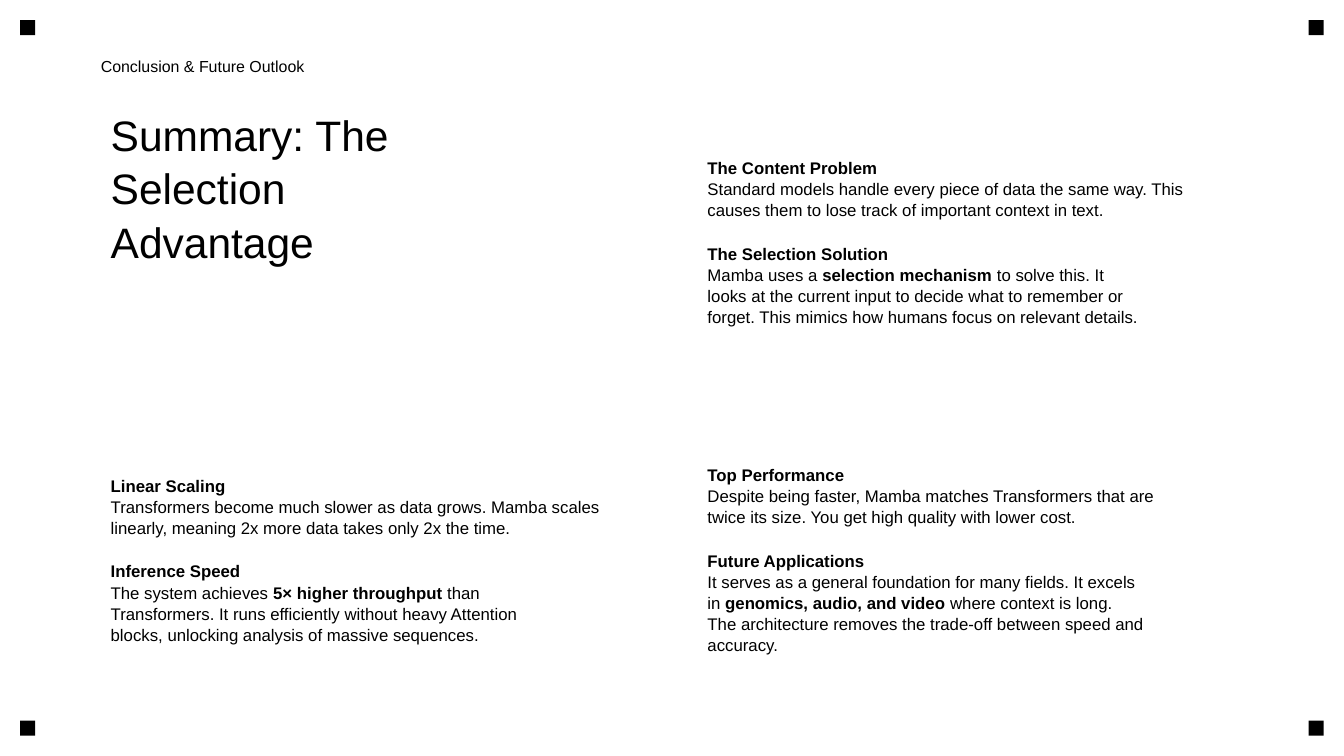
from dataclasses import dataclass
from itertools import product

from pptx import Presentation
from pptx import util as u
from pptx.dml.color import RGBColor
from pptx.enum import shapes, text

SLIDE_WIDTH, SLIDE_HEIGHT = 33.87, 19.05
MARGIN = 2.54
COLUMN_WIDTH, ROW_HEIGHT = 13.77, 7.24
COLUMN_GAP, ROW_GAP = 1.27, 0.76
CORNER_SIZE, CORNER_INSET = 0.38, 0.51
CELL_INSETS = (0.25, 0.13, 0.13, 0.25)


@dataclass(frozen=True)
class Theme:
    font: str = "Arial"
    ink: RGBColor = RGBColor(0, 0, 0)
    paper: RGBColor = RGBColor(255, 255, 255)
    title_size: float = 30.4
    label_size: float = 11.4
    body_size: float = 12
    line_spacing: float = 1.05
    section_gap: float = 16


class SlideBuilder:
    def __init__(self, slide, theme):
        self.slide = slide
        self.theme = theme
        fill = slide.background.fill
        fill.solid()
        fill.fore_color.rgb = theme.paper

    def corner(self, left, top):
        shape = self.slide.shapes.add_shape(
            shapes.MSO_SHAPE.RECTANGLE,
            u.Cm(left), u.Cm(top), u.Cm(CORNER_SIZE), u.Cm(CORNER_SIZE))
        shape.shadow.inherit = False
        shape.fill.solid()
        shape.fill.fore_color.rgb = self.theme.ink
        shape.line.fill.background()

    def frame(self, box, insets, anchor):
        shape = self.slide.shapes.add_textbox(*map(u.Cm, box))
        frame = shape.text_frame
        frame.word_wrap = True
        frame.vertical_anchor = anchor
        (frame.margin_left, frame.margin_top,
         frame.margin_right, frame.margin_bottom) = map(u.Cm, insets)
        return frame

    def format_run(self, run, size, bold=False):
        run.font.name = self.theme.font
        run.font.size = u.Pt(size)
        run.font.color.rgb = self.theme.ink
        run.font.bold = bold

    def plain_text(self, box, lines, size, insets, anchor):
        frame = self.frame(box, insets, anchor)
        frame.text = "\n".join(lines)
        for paragraph in frame.paragraphs:
            paragraph.line_spacing = self.theme.line_spacing
            for run in paragraph.runs:
                self.format_run(run, size)

    def sections(self, box, sections):
        frame = self.frame(box, CELL_INSETS, text.MSO_ANCHOR.MIDDLE)
        lines = [line for heading, *body in sections
                 for line in (f"*{heading}*", *body)]
        frame.text = "\n" * (len(lines) - 1)
        for paragraph, line in zip(frame.paragraphs, lines):
            paragraph.line_spacing = self.theme.line_spacing
            for index, part in enumerate(line.split("*")):
                if part:
                    run = paragraph.add_run()
                    run.text = part
                    self.format_run(run, self.theme.body_size, index % 2 == 1)
        last_line = -1
        for section in sections[:-1]:
            last_line += len(section)
            frame.paragraphs[last_line].space_after = u.Pt(self.theme.section_gap)


TITLE = ("Summary: The", "Selection", "Advantage")

SECTIONS = {
    (1, 0): (
        ("The Content Problem",
         "Standard models handle every piece of data the same way. This",
         "causes them to lose track of important context in text."),
        ("The Selection Solution",
         "Mamba uses a *selection mechanism* to solve this. It",
         "looks at the current input to decide what to remember or",
         "forget. This mimics how humans focus on relevant details."),
    ),
    (0, 1): (
        ("Linear Scaling",
         "Transformers become much slower as data grows. Mamba scales",
         "linearly, meaning 2x more data takes only 2x the time."),
        ("Inference Speed",
         "The system achieves *5× higher throughput* than",
         "Transformers. It runs efficiently without heavy Attention",
         "blocks, unlocking analysis of massive sequences."),
    ),
    (1, 1): (
        ("Top Performance",
         "Despite being faster, Mamba matches Transformers that are",
         "twice its size. You get high quality with lower cost."),
        ("Future Applications",
         "It serves as a general foundation for many fields. It excels",
         "in *genomics, audio, and video* where context is long.",
         "The architecture removes the trade-off between speed and",
         "accuracy."),
    ),
}


def cell(column, row):
    return (MARGIN + column * (COLUMN_WIDTH + COLUMN_GAP),
            MARGIN + row * (ROW_HEIGHT + ROW_GAP),
            COLUMN_WIDTH, ROW_HEIGHT)


def main():
    presentation = Presentation()
    presentation.slide_width = u.Cm(SLIDE_WIDTH)
    presentation.slide_height = u.Cm(SLIDE_HEIGHT)
    theme = Theme()
    slide = presentation.slides.add_slide(presentation.slide_layouts[6])
    builder = SlideBuilder(slide, theme)

    far_edge = CORNER_INSET + CORNER_SIZE
    for top, left in product((CORNER_INSET, SLIDE_HEIGHT - far_edge),
                             (CORNER_INSET, SLIDE_WIDTH - far_edge)):
        builder.corner(left, top)

    builder.plain_text(cell(0, 0), TITLE, theme.title_size,
                       CELL_INSETS, text.MSO_ANCHOR.TOP)
    for position, sections in SECTIONS.items():
        builder.sections(cell(*position), sections)
    builder.plain_text((MARGIN, 1.02, 15.24, 1.27),
                       ["Conclusion & Future Outlook"], theme.label_size,
                       (0, 0, 0, 0), text.MSO_ANCHOR.MIDDLE)

    presentation.save("out.pptx")


if __name__ == "__main__":
    main()
